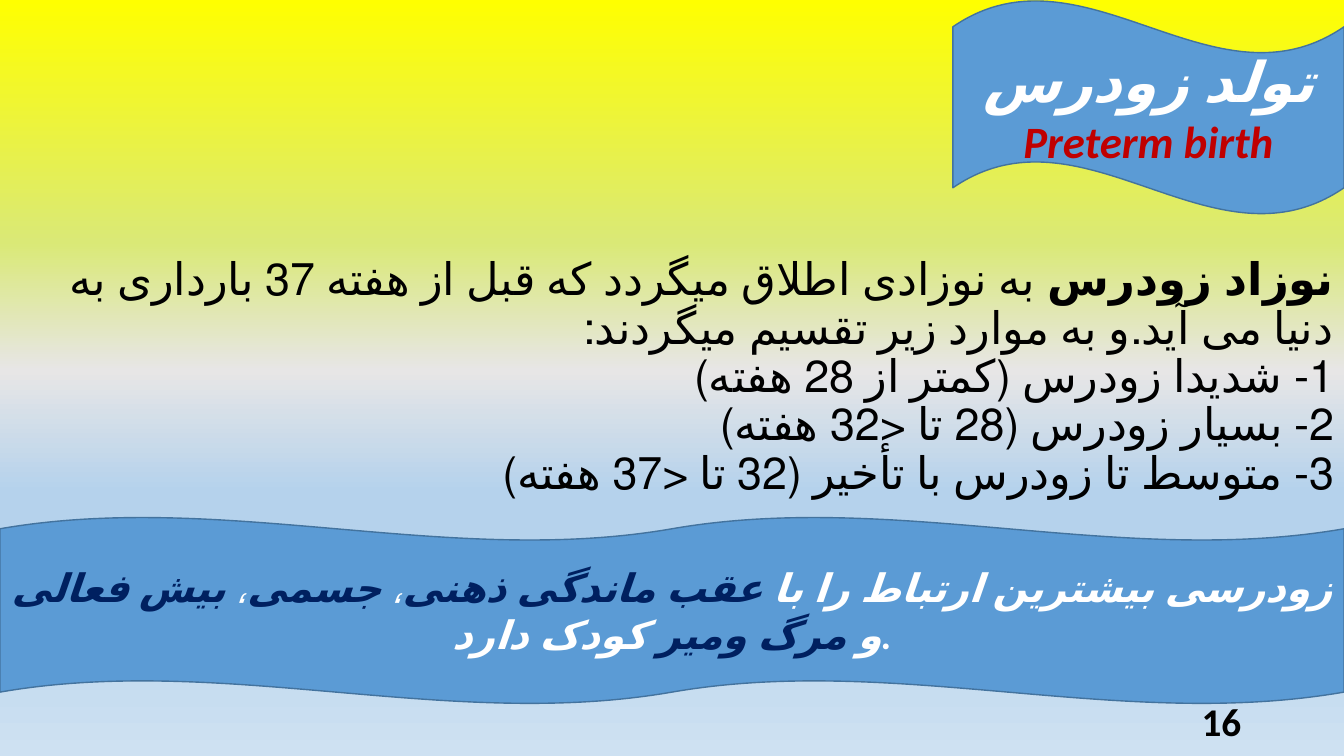
from dataclasses import dataclass

from lxml import etree
from pptx import Presentation
from pptx.dml.color import RGBColor
from pptx.enum.lang import MSO_LANGUAGE_ID
from pptx.enum.shapes import MSO_SHAPE
from pptx.enum.text import MSO_ANCHOR, PP_ALIGN
from pptx.oxml.ns import qn
from pptx.util import Inches, Pt

WAVE, DOUBLE_WAVE = MSO_SHAPE.WAVE, MSO_SHAPE.DOUBLE_WAVE
MIDDLE = MSO_ANCHOR.MIDDLE
CENTER, RIGHT = PP_ALIGN.CENTER, PP_ALIGN.RIGHT
PERSIAN = MSO_LANGUAGE_ID.FARSI


@dataclass(frozen=True)
class Theme:
    font: str = "Calibri"
    black: str = "000000"
    white: str = "FFFFFF"
    red: str = "C00000"
    navy: str = "002060"
    wave_fill: str = "5B9BD5"
    wave_line: str = "43739E"
    heading_size: int = 40
    body_size: int = 32
    note_size: int = 28
    background: tuple = (
        (0, "FFFF00"), (32, "DAE976"), (49, "E7E6E6"),
        (65, "B5D2EC"), (74, "B5D2EC"), (100, "CEE1F2"),
    )


THEME = Theme()
WIDTH, HEIGHT = 13.33, 7.5

COMMA = "، "
DEFINITION_TERM = "نوزاد زودرس "
DEFINITION_LINES = [
    "به نوزادی اطلاق میگردد که قبل از هفته 37 بارداری به دنیا می آید.و به موارد زیر تقسیم میگردند:",
    "1- شدیدا زودرس (کمتر از 28 هفته)",
    "2- بسیار زودرس (28 تا <32 هفته)",
    "3- متوسط تا زودرس با تأخیر (32 تا <37 هفته)",
]
HEADING = [
    ("تولد زودرس", THEME.heading_size, THEME.white),
    ("Preterm birth", THEME.body_size, THEME.red),
]
CONSEQUENCES = [
    ("زودرسی بیشترین ارتباط را با ", THEME.white),
    ("عقب ماندگی ذهنی", THEME.navy),
    (COMMA, THEME.white),
    ("جسمی", THEME.navy),
    (COMMA, THEME.white),
    ("بیش فعالی ", THEME.navy),
    ("و ", THEME.white),
    ("مرگ ومیر ", THEME.navy),
    ("کودک دارد.", THEME.white),
]
SLIDE_NUMBER = "16"

BOXES = {
    "definition": (0, 0, 1, 1),
    "heading": (0.709, 0, 0.291, 0.284),
    "consequences": (0, 0.684, 1, 0.247),
    "number": (0.706, 0.927, 0.225, 0.053),
}


def place(name):
    return [Inches(share * side) for share, side in zip(BOXES[name], (WIDTH, HEIGHT) * 2)]


def add_run(paragraph, text, size, color, bold=True, italic=False):
    run = paragraph.add_run()
    run.text = text
    font = run.font
    font.name, font.size = THEME.font, Pt(size)
    font.bold, font.italic = bold, italic
    font.color.rgb = RGBColor.from_string(color)
    if text != COMMA:
        font.language_id = PERSIAN


def prepare_text(shape):
    frame = shape.text_frame
    frame.word_wrap = True
    frame.vertical_anchor = MIDDLE
    return frame


def add_text_box(slide, name):
    paragraph = prepare_text(slide.shapes.add_textbox(*place(name))).paragraphs[0]
    paragraph.alignment = RIGHT
    return paragraph


def add_wave(slide, name, preset):
    shape = slide.shapes.add_shape(preset, *place(name))
    shape.shadow.inherit = False
    shape.fill.solid()
    shape.fill.fore_color.rgb = RGBColor.from_string(THEME.wave_fill)
    shape.line.color.rgb = RGBColor.from_string(THEME.wave_line)
    shape.line.width = Pt(1)
    return prepare_text(shape)


def paint_background(slide):
    fill = slide.background.fill
    fill.gradient()
    fill.gradient_angle = 270
    stops = next(slide.element.iter(qn("a:gsLst")))
    for stop in list(stops):
        stops.remove(stop)
    for percent, color in THEME.background:
        stop = etree.SubElement(stops, qn("a:gs"), pos=str(percent * 1000))
        etree.SubElement(stop, qn("a:srgbClr"), val=color)


def add_definition(slide):
    paragraph = add_text_box(slide, "definition")
    paragraph.line_spacing = 0.9
    paragraph._p.get_or_add_pPr().set("rtl", "1")
    add_run(paragraph, DEFINITION_TERM, THEME.body_size, THEME.black)
    for index, line in enumerate(DEFINITION_LINES):
        if index:
            paragraph.add_line_break()
        add_run(paragraph, line, THEME.body_size, THEME.black, bold=False)


def add_heading(slide):
    frame = add_wave(slide, "heading", WAVE)
    for index, (text, size, color) in enumerate(HEADING):
        paragraph = frame.add_paragraph() if index else frame.paragraphs[0]
        paragraph.alignment = CENTER
        add_run(paragraph, text, size, color, italic=True)


def add_consequences(slide):
    paragraph = add_wave(slide, "consequences", DOUBLE_WAVE).paragraphs[0]
    paragraph.alignment = CENTER
    for text, color in CONSEQUENCES:
        add_run(paragraph, text, THEME.note_size, color, italic=True)


def main():
    presentation = Presentation()
    presentation.slide_width, presentation.slide_height = Inches(WIDTH), Inches(HEIGHT)
    slide = presentation.slides.add_slide(presentation.slide_layouts[6])
    paint_background(slide)
    add_definition(slide)
    add_heading(slide)
    add_consequences(slide)
    add_run(add_text_box(slide, "number"), SLIDE_NUMBER, THEME.note_size, THEME.black)
    presentation.save("out.pptx")


if __name__ == "__main__":
    main()
